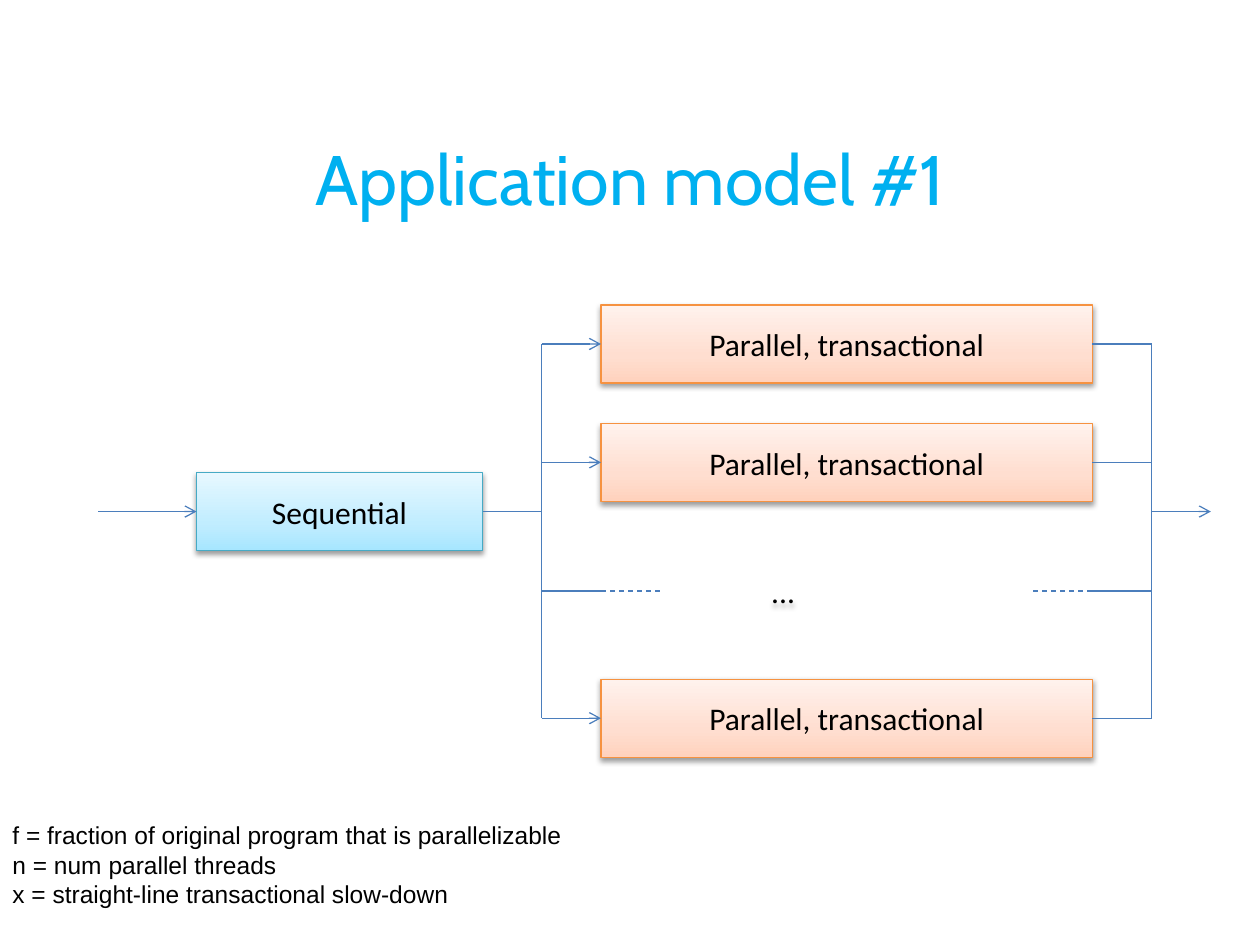
import pptx
import pptx.util
import pptx.dml.color
import pptx.enum.dml
import pptx.enum.shapes
import pptx.enum.text
import pptx.oxml
import pptx.oxml.ns
import lxml.etree

Inches = pptx.util.Inches
Pt = pptx.util.Pt
qn = pptx.oxml.ns.qn
MID = pptx.enum.text.MSO_ANCHOR.MIDDLE
CENTER = pptx.enum.text.PP_ALIGN.CENTER

COLORS = {
    "title": "00B0F0",
    "text": "000000",
    "wire": "4B7EBC",
    "blue": "46AAC5",
    "orange": "F69240",
}
FADES = {
    "blue": ["A7E6FF", "C1EDFF", "E7F8FF"],
    "orange": ["FFD2BD", "FFDED0", "FFF2ED"],
}
STOPS = [0, 35, 100]
HIGH = 0.62
FORK, LEFT, RIGHT, JOIN = 4.3, 4.77, 8.67, 9.14
MAIN, GAP = 4.06, 4.69
ROWS = [2.73, 3.67, 5.7]


def rgb(name):
    return pptx.dml.color.RGBColor.from_string(COLORS[name])


def add_tag(parent, tag, **attrs):
    return lxml.etree.SubElement(parent, qn(tag), attrs)


def style(shape, size, font, color="text", align=CENTER):
    for para in shape.text_frame.paragraphs:
        para.alignment = align
        for run in para.runs:
            run.font.size = Pt(size)
            run.font.name = font
            run.font.color.rgb = rgb(color)


def add_shadow(shape):
    shape.shadow.inherit = False
    effects = shape.element.spPr.find(qn("a:effectLst"))
    outer = add_tag(effects, "a:outerShdw", blurRad=str(Pt(3.1)), dist=str(Pt(1.6)),
                    dir="5400000", rotWithShape="0")
    tint = add_tag(outer, "a:srgbClr", val="000000")
    add_tag(tint, "a:alpha", val="38000")


def add_fade(shape, name):
    shape.fill.gradient()
    shape.fill.gradient_angle = 90
    stops = shape.element.spPr.find(".//" + qn("a:gsLst"))
    for stop in list(stops):
        stops.remove(stop)
    for place, color in zip(STOPS, FADES[name]):
        stop = add_tag(stops, "a:gs", pos=str(place * 1000))
        add_tag(stop, "a:srgbClr", val=color)


def add_box(slide, text, x, mid, width, name):
    box = slide.shapes.add_shape(
        pptx.enum.shapes.MSO_SHAPE.RECTANGLE,
        Inches(x), Inches(mid - HIGH / 2), Inches(width), Inches(HIGH))
    add_fade(box, name)
    box.line.color.rgb = rgb(name)
    box.line.width = Pt(0.75)
    add_shadow(box)
    box.text_frame.text = text
    box.text_frame.vertical_anchor = MID
    style(box, 18, "Calibri")
    return box


def add_text(slide, text, x, y, width, height, wrap=True):
    box = slide.shapes.add_textbox(Inches(x), Inches(y), Inches(width), Inches(height))
    box.text_frame.text = text
    box.text_frame.word_wrap = wrap
    return box


def add_wire(slide, start, end, arrow=False, dash=False, source=None, target=None):
    wire = slide.shapes.add_connector(
        pptx.enum.shapes.MSO_CONNECTOR.STRAIGHT, *map(Inches, start + end))
    if source:
        wire.begin_connect(source, 3)
    if target:
        wire.end_connect(target, 1)
    wire.line.color.rgb = rgb("wire")
    wire.line.width = Pt(0.75)
    if dash:
        wire.line.dash_style = pptx.enum.dml.MSO_LINE.DASH
    props = wire.element.spPr
    if arrow:
        add_tag(props.find(qn("a:ln")), "a:tailEnd", type="arrow")
    add_tag(props, "a:effectLst")


def add_flow(slide):
    first = add_box(slide, "Sequential", 1.56, MAIN, 2.27, "blue")
    add_wire(slide, (0.78, MAIN), (1.56, MAIN), arrow=True, target=first)
    add_wire(slide, (3.83, MAIN), (FORK, MAIN), source=first)
    for mid in ROWS:
        box = add_box(slide, "Parallel, transactional", LEFT, mid, RIGHT - LEFT, "orange")
        add_wire(slide, (FORK, mid), (LEFT, mid), arrow=True, target=box)
        add_wire(slide, (RIGHT, mid), (JOIN, mid), source=box)
    for x in (FORK, JOIN):
        add_wire(slide, (x, ROWS[-1]), (x, ROWS[0]))
    for x, dash in [(FORK, False), (LEFT, True), (8.2, True), (RIGHT, False)]:
        add_wire(slide, (x, GAP), (x + 0.47, GAP), dash=dash)
    add_wire(slide, (JOIN, MAIN), (9.61, MAIN), arrow=True)
    dots = add_text(slide, "...", LEFT, GAP - HIGH / 2, 2.89, HIGH)
    dots.text_frame.vertical_anchor = MID
    style(dots, 18, "Calibri")
    add_shadow(dots)


def main():
    deck = pptx.Presentation()
    deck.slide_width, deck.slide_height = Inches(10), Inches(7.5)
    slide = deck.slides.add_slide(deck.slide_layouts[6])
    title = add_text(slide, "Application model #1", 0.5, 0.78, 9, 1.25)
    title.text_frame.vertical_anchor = MID
    style(title, 40, "Cabin", "title")
    add_flow(slide)
    notes = add_text(
        slide,
        "f = fraction of original program that is parallelizable\n"
        "n = num parallel threads\n"
        "x = straight-line transactional slow-down",
        0, 6.46, 4.58, 0.81, wrap=False)
    notes.text_frame.auto_size = pptx.enum.text.MSO_AUTO_SIZE.SHAPE_TO_FIT_TEXT
    style(notes, 14, "Arial", align=pptx.enum.text.PP_ALIGN.LEFT)
    deck.save("out.pptx")


if __name__ == "__main__":
    main()
